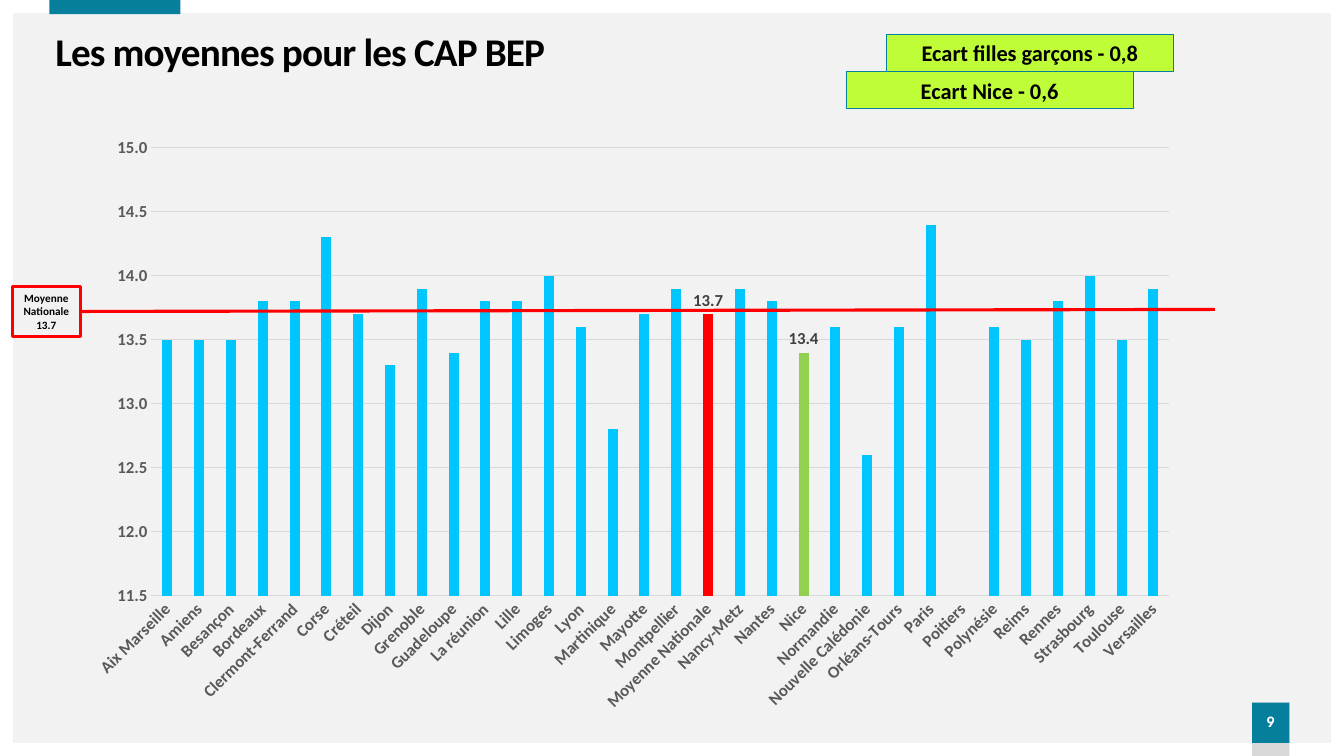
"""Build the slide of CAP BEP averages by academy."""
from lxml.etree import SubElement
from pptx import Presentation
from pptx.chart.data import CategoryChartData
from pptx.dml.color import RGBColor
from pptx.enum.chart import XL_CHART_TYPE, XL_LABEL_POSITION, XL_TICK_MARK
from pptx.enum.shapes import MSO_CONNECTOR, MSO_SHAPE
from pptx.enum.text import MSO_ANCHOR, PP_ALIGN
from pptx.oxml.ns import qn
from pptx.util import Inches, Pt

WHITE = RGBColor(0xFF, 0xFF, 0xFF)
BLACK = RGBColor(0x00, 0x00, 0x00)
PALE = RGBColor(0xF2, 0xF2, 0xF2)
GRAY = RGBColor(0xD9, 0xD9, 0xD9)
DARK = RGBColor(0x59, 0x59, 0x59)
LABEL = RGBColor(0x40, 0x40, 0x40)
TEAL = RGBColor(0x06, 0x7F, 0x9C)
LIME = RGBColor(0xC0, 0xFD, 0x39)
BLUE = RGBColor(0x01, 0xC6, 0xFD)
RED = RGBColor(0xFF, 0x00, 0x00)
GREEN = RGBColor(0x92, 0xD0, 0x50)

AVERAGES = {
    "Aix Marseille": 13.5, "Amiens": 13.5, "Besançon": 13.5, "Bordeaux": 13.8,
    "Clermont-Ferrand": 13.8, "Corse": 14.3, "Créteil": 13.7, "Dijon": 13.3,
    "Grenoble": 13.9, "Guadeloupe": 13.4, "La réunion": 13.8, "Lille": 13.8,
    "Limoges": 14.0, "Lyon": 13.6, "Martinique": 12.8, "Mayotte": 13.7,
    "Montpellier": 13.9, "Moyenne Nationale": 13.7, "Nancy-Metz": 13.9,
    "Nantes": 13.8, "Nice": 13.4, "Normandie": 13.6, "Nouvelle Calédonie": 12.6,
    "Orléans-Tours": 13.6, "Paris": 14.4, "Poitiers": None, "Polynésie": 13.6,
    "Reims": 13.5, "Rennes": 13.8, "Strasbourg": 14.0, "Toulouse": 13.5,
    "Versailles": 13.9,
}
HIGHLIGHTS = {"Moyenne Nationale": RED, "Nice": GREEN}


def add_box(box, fill=None, line=None, width=0.5, kind=MSO_SHAPE.RECTANGLE):
    sp = s.shapes.add_shape(kind, *map(Inches, box))
    sp.shadow.inherit = False
    if fill is None:
        sp.fill.background()
    else:
        sp.fill.solid()
        sp.fill.fore_color.rgb = fill
    if line is None:
        sp.line.fill.background()
    else:
        sp.line.color.rgb = line
        sp.line.width = Pt(width)
    return sp


def write(sp, lines, size, color=BLACK, align=PP_ALIGN.CENTER, font="Calibri", **frame):
    tf = sp.text_frame
    for name, value in {"word_wrap": True, **frame}.items():
        setattr(tf, name, value)
    p = tf.paragraphs[0]
    p.alignment = align
    for i, line in enumerate(lines):
        if i:
            p.add_line_break()
        r = p.add_run()
        r.text = line
        for name, value in {"name": font, "size": Pt(size), "bold": True}.items():
            setattr(r.font, name, value)
        r.font.color.rgb = color
    return p


prs = Presentation()
prs.slide_width, prs.slide_height = Inches(13.33), Inches(7.5)
s = prs.slides.add_slide(prs.slide_layouts[6])
s.background.fill.solid()
s.background.fill.fore_color.rgb = PALE

border = add_box((0, 0, 13.33, 7.5), WHITE, kind=MSO_SHAPE.FRAME)
border.adjustments[0] = 0.017
add_box((0.49, 0, 1.3, 0.14), TEAL)
add_box((12.42, 6.97, 0.37, 0.53), GRAY)
number = add_box((12.42, 6.97, 0.37, 0.4), TEAL)
p = write(number, ["9"], 10, WHITE, font="TeX Gyre Adventor",
          vertical_anchor=MSO_ANCHOR.MIDDLE, margin_left=0, margin_right=0)
p.line_spacing = 0.9

title = s.shapes.add_textbox(Inches(0.45), Inches(0.27), Inches(12.22), Inches(0.53))
p = write(title, ["Les moyennes pour les CAP BEP"], 28, align=PP_ALIGN.LEFT,
          vertical_anchor=MSO_ANCHOR.MIDDLE)
p.line_spacing = 0.9
p.runs[0].font._element.set("spc", "-60")

for left, top, text in [(8.79, 0.34, "Ecart filles garçons - 0,8"),
                        (8.39, 0.71, "Ecart Nice - 0,6")]:
    write(add_box((left, top, 2.85, 0.37), LIME, TEAL), [text], 16,
          vertical_anchor=MSO_ANCHOR.MIDDLE)

data = CategoryChartData(number_format="0.0")
data.categories = list(AVERAGES)
data.add_series("Moyenne", AVERAGES.values())
chart = s.shapes.add_chart(XL_CHART_TYPE.COLUMN_CLUSTERED, Inches(0.73), Inches(1.25),
                           Inches(11.09), Inches(5.93), data).chart
chart.has_legend = False
chart.has_title = False
cat, val = chart.category_axis, chart.value_axis
for font, color in [(chart.font, BLACK), (cat.tick_labels.font, DARK),
                    (val.tick_labels.font, DARK)]:
    for name, value in {"name": "Calibri", "size": Pt(12), "bold": True}.items():
        setattr(font, name, value)
    font.color.rgb = color
for axis in (cat, val):
    axis.major_tick_mark = axis.minor_tick_mark = XL_TICK_MARK.NONE
for name, value in {"minimum_scale": 11.5, "maximum_scale": 15, "major_unit": 0.5,
                    "has_major_gridlines": True}.items():
    setattr(val, name, value)
val.tick_labels.number_format = "0.0"
val.tick_labels.number_format_is_linked = False
val.format.line.fill.background()
for line in (cat.format.line, val.major_gridlines.format.line):
    line.color.rgb = GRAY
    line.width = Pt(0.75)
cat._element.find(qn("c:txPr")).find(qn("a:bodyPr")).set("rot", "-2700000")

plot = chart.plots[0]
for name, value in {"gap_width": 219, "overlap": -27, "vary_by_categories": False}.items():
    setattr(plot, name, value)
series = plot.series[0]
series.format.fill.solid()
series.format.fill.fore_color.rgb = BLUE
series.data_labels.show_value = False
for academy, color in HIGHLIGHTS.items():
    point = series.points[list(AVERAGES).index(academy)]
    point.format.fill.solid()
    point.format.fill.fore_color.rgb = color
    label = point.data_label
    label.position = XL_LABEL_POSITION.OUTSIDE_END
    for name, value in {"name": "Calibri", "size": Pt(12), "bold": True}.items():
        setattr(label.font, name, value)
    label.font.color.rgb = LABEL

average = add_box((0.12, 2.84, 0.68, 0.5), line=RED, width=2.25)
write(average, ["Moyenne Nationale", "13.7"], 8, vertical_anchor=MSO_ANCHOR.MIDDLE)
level = s.shapes.add_connector(MSO_CONNECTOR.STRAIGHT, Inches(0.8), Inches(3.08),
                               Inches(12.05), Inches(3.07))
level.begin_connect(average, 3)
level.line.color.rgb = RED
level.line.width = Pt(2.25)
SubElement(level._element.spPr, qn("a:effectLst"))

prs.save("out.pptx")
